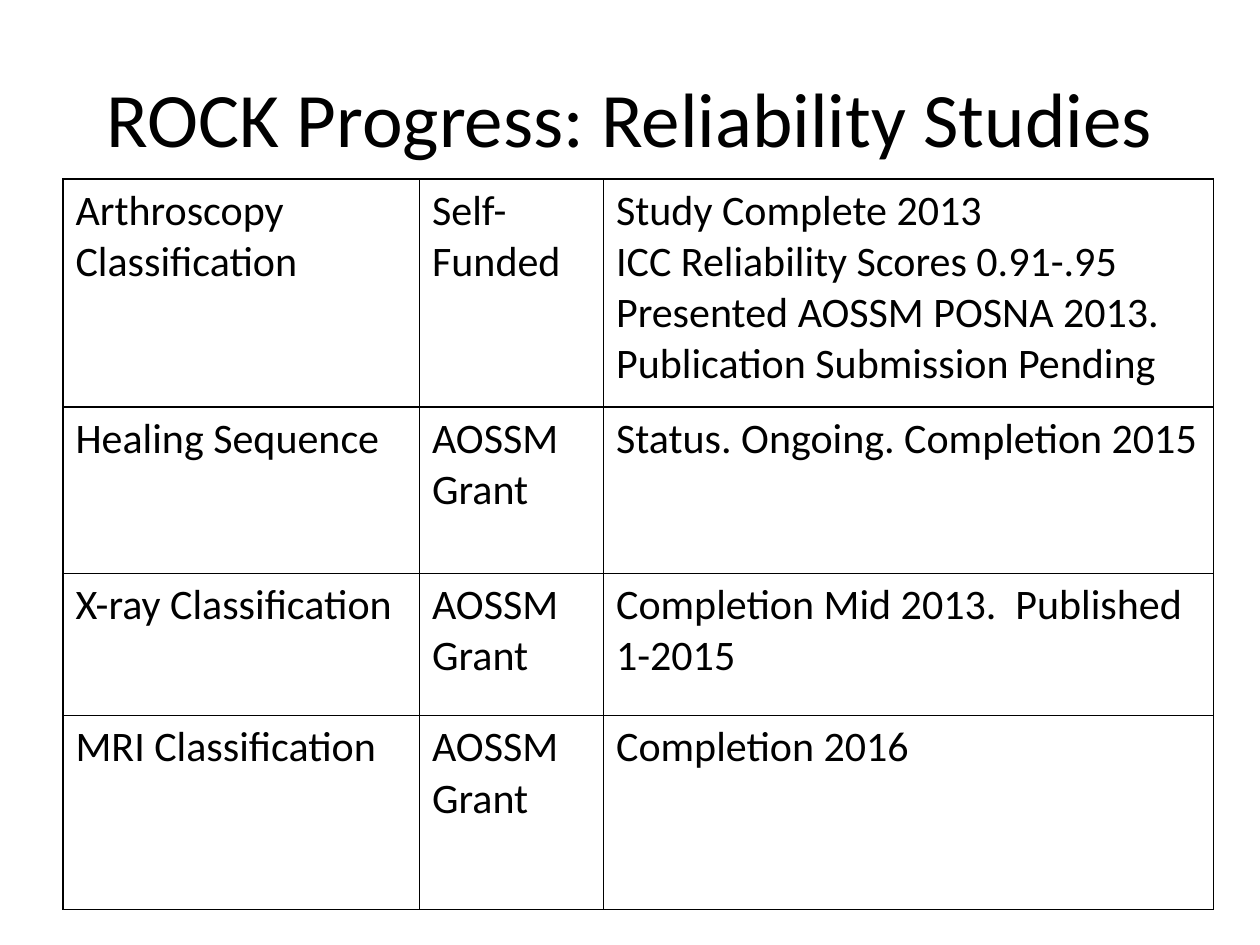
from lxml.etree import SubElement
from pptx import Presentation
from pptx.dml.color import RGBColor
from pptx.enum.text import MSO_ANCHOR as Anchor, PP_ALIGN as Align
from pptx.oxml.ns import qn
from pptx.util import Inches, Pt

COLORS = {"ink": "000000", "paper": "FFFFFF"}
FONT = "Calibri"
COLUMN_WIDTHS = [2.83, 1.46, 4.84]
ROW_HEIGHTS = [1.81, 1.32, 1.13, 1.54]
STUDIES = [
    ("Arthroscopy Classification", "Self-Funded",
     "Study Complete 2013\nICC Reliability Scores 0.91-.95\n"
     "Presented AOSSM POSNA 2013.  Publication Submission Pending"),
    ("Healing Sequence", "AOSSM Grant", "Status. Ongoing. Completion 2015"),
    ("X-ray Classification", "AOSSM Grant", "Completion Mid 2013.  Published 1-2015"),
    ("MRI Classification", "AOSSM\nGrant", "Completion 2016"),
]


def write_text(frame, text, size, align=Align.LEFT, anchor=Anchor.TOP):
    """Fill a text frame, one paragraph for each line of text."""
    frame.text = text
    frame.word_wrap = True
    frame.vertical_anchor = anchor
    for para in frame.paragraphs:
        para.alignment = align
        for span in para.runs:
            span.font.name = FONT
            span.font.size = Pt(size)
            span.font.color.rgb = RGBColor.from_string(COLORS["ink"])


def format_cell(cell):
    """Give a cell a plain fill and a 1 pt line on each side."""
    properties = cell._tc.get_or_add_tcPr()
    for side in ("a:lnL", "a:lnR", "a:lnT", "a:lnB"):
        line = SubElement(properties, qn(side), w=str(Pt(1)))
        fill = SubElement(line, qn("a:solidFill"))
        SubElement(fill, qn("a:srgbClr"), val=COLORS["ink"])
    cell.fill.solid()
    cell.fill.fore_color.rgb = RGBColor.from_string(COLORS["paper"])


deck = Presentation()
deck.slide_width, deck.slide_height = Inches(10), Inches(7.5)
page = deck.slides.add_slide(deck.slide_layouts[5])

title = page.shapes.title
title.left, title.top = Inches(0.5), Inches(0.3)
title.width, title.height = Inches(9), Inches(1.25)
write_text(title.text_frame, "ROCK Progress: Reliability Studies", 44,
           align=Align.CENTER, anchor=Anchor.MIDDLE)

table = page.shapes.add_table(
    len(STUDIES), len(COLUMN_WIDTHS), Inches(0.5), Inches(1.42),
    Inches(sum(COLUMN_WIDTHS)), Inches(sum(ROW_HEIGHTS))).table
table.first_row = table.horz_banding = False
for column, width in zip(table.columns, COLUMN_WIDTHS):
    column.width = Inches(width)
for row, height, study in zip(table.rows, ROW_HEIGHTS, STUDIES):
    row.height = Inches(height)
    for cell, text in zip(row.cells, study):
        write_text(cell.text_frame, text, 24)
        format_cell(cell)

deck.save("out.pptx")
